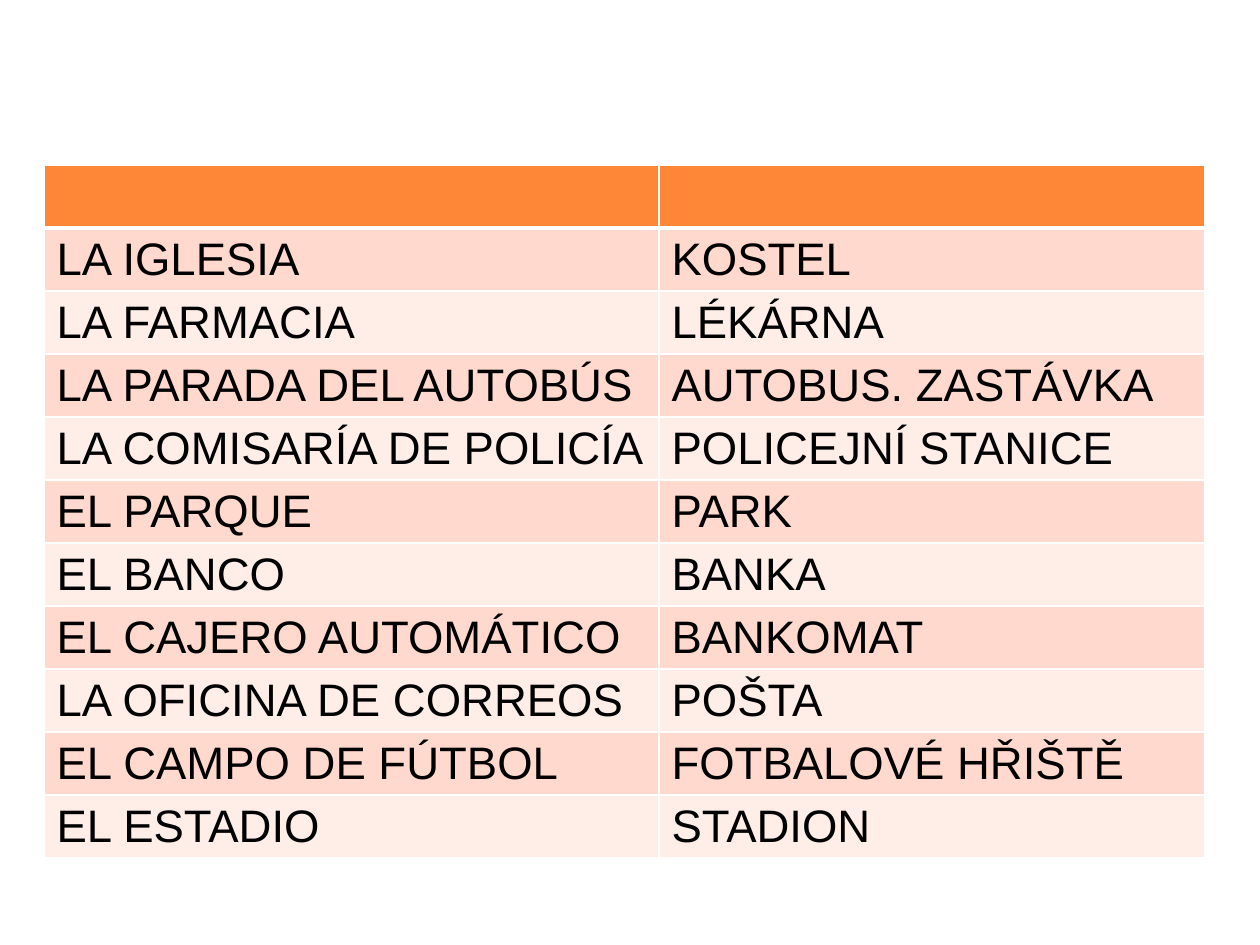
from lxml import etree
from pptx import Presentation
from pptx.dml.color import RGBColor
from pptx.enum.text import MSO_ANCHOR
from pptx.oxml.ns import qn
from pptx.util import Inches, Pt

TOP = MSO_ANCHOR.TOP
WHITE = RGBColor(0xFF, 0xFF, 0xFF)
BLACK = RGBColor(0x00, 0x00, 0x00)
ORANGE = RGBColor(0xFE, 0x86, 0x37)
PEACH = RGBColor(0xFF, 0xD9, 0xCE)
PALE_PEACH = RGBColor(0xFF, 0xED, 0xE8)

VOCABULARY = [
    ("", ""),
    ("LA IGLESIA", "KOSTEL"),
    ("LA FARMACIA", "LÉKÁRNA"),
    ("LA PARADA DEL AUTOBÚS", "AUTOBUS. ZASTÁVKA"),
    ("LA COMISARÍA DE POLICÍA", "POLICEJNÍ STANICE"),
    ("EL PARQUE", "PARK"),
    ("EL BANCO", "BANKA"),
    ("EL CAJERO AUTOMÁTICO", "BANKOMAT"),
    ("LA OFICINA DE CORREOS", "POŠTA"),
    ("EL CAMPO DE FÚTBOL", "FOTBALOVÉ HŘIŠTĚ"),
    ("EL ESTADIO", "STADION"),
]
COLUMN_WIDTHS = (4.88, 4.33)
ROW_HEIGHT = 0.5


class VocabularySlide:
    font_format = {"name": "Arial", "size": Pt(26), "bold": False}
    cell_format = {
        "margin_left": Inches(0.1),
        "margin_right": Inches(0.1),
        "margin_top": Inches(0.05),
        "margin_bottom": Inches(0.04),
        "vertical_anchor": TOP,
    }

    def __init__(self, slide):
        self.slide = slide

    def apply(self, target, values):
        for attribute, value in values.items():
            setattr(target, attribute, value)

    def border(self, cell, side, points):
        properties = cell._tc.get_or_add_tcPr()
        line = etree.SubElement(properties, qn(f"a:ln{side}"), w=str(Pt(points)))
        fill = etree.SubElement(line, qn("a:solidFill"))
        etree.SubElement(fill, qn("a:srgbClr"), val=str(WHITE))

    def cell(self, cell, text, row):
        self.apply(cell, self.cell_format)
        widths = {"L": 1, "R": 1, "T": 3 if row == 1 else 1, "B": 3 if row == 0 else 1}
        for side, points in widths.items():
            self.border(cell, side, points)
        cell.fill.solid()
        band = PEACH if row % 2 else PALE_PEACH
        cell.fill.fore_color.rgb = ORANGE if row == 0 else band
        if text:
            word = cell.text_frame.paragraphs[0].add_run()
            word.text = text
            self.apply(word.font, self.font_format)
            word.font.color.rgb = BLACK

    def table(self, left, top, widths, row_height, entries):
        frame = self.slide.shapes.add_table(
            len(entries), len(widths), Inches(left), Inches(top),
            Inches(sum(widths)), Inches(row_height * len(entries)),
        )
        table = frame.table
        for column, width in zip(table.columns, widths):
            column.width = Inches(width)
        for row, entry in enumerate(entries):
            table.rows[row].height = Inches(row_height)
            for column, text in enumerate(entry):
                self.cell(table.cell(row, column), text, row)


def main():
    presentation = Presentation()
    presentation.slide_width = Inches(10)
    presentation.slide_height = Inches(7.5)
    blank_layout = presentation.slide_layouts[6]
    vocabulary = VocabularySlide(presentation.slides.add_slide(blank_layout))
    vocabulary.table(0.35, 1.31, COLUMN_WIDTHS, ROW_HEIGHT, VOCABULARY)
    presentation.save("out.pptx")


if __name__ == "__main__":
    main()
